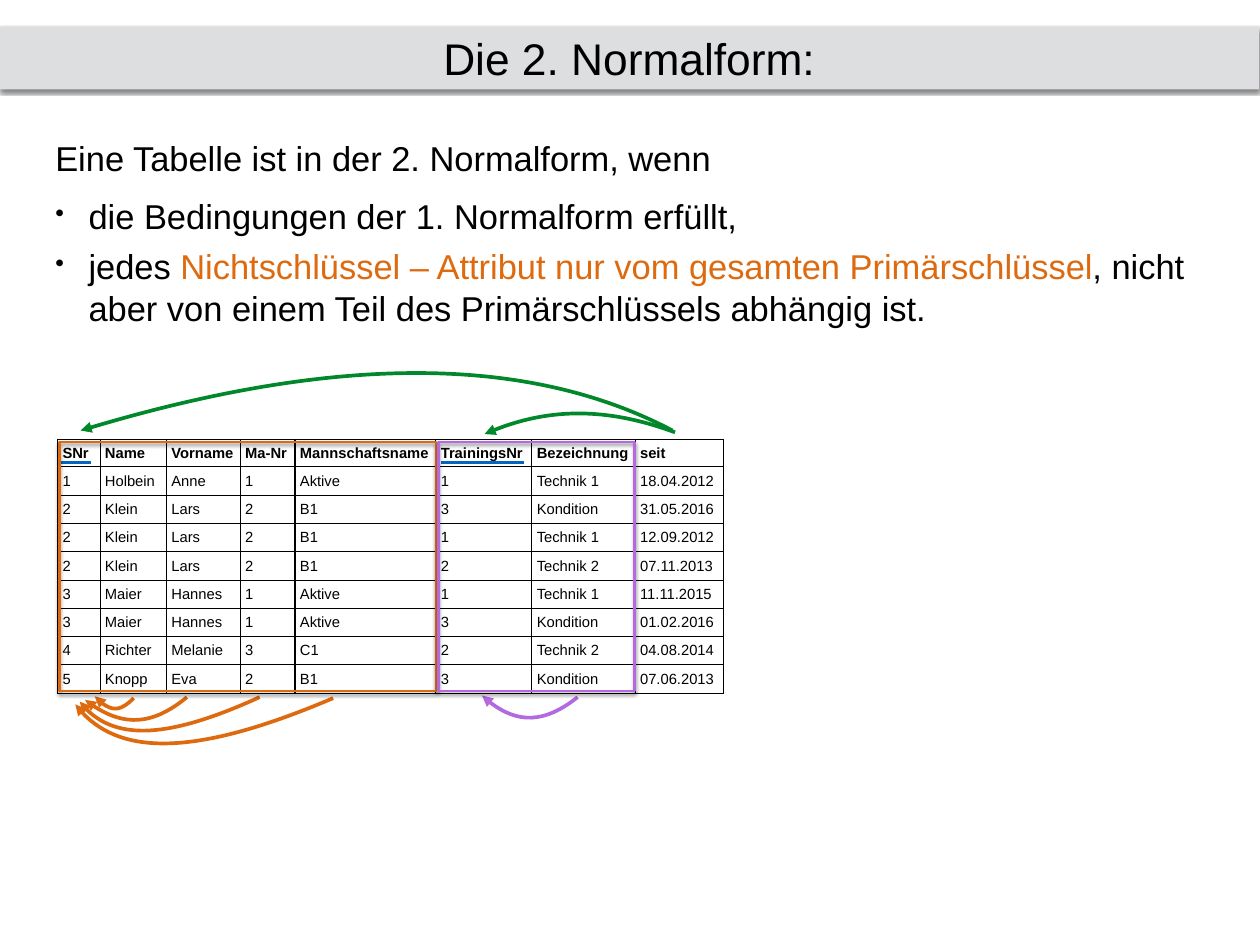
"""Builds the slide on the second normal form with its dependency arrows."""
from lxml import etree
from pptx import Presentation
from pptx import util as u
from pptx.dml import color
from pptx.enum import shapes, text
from pptx.oxml import ns

BLACK, WHITE, GREY = "000000", "FFFFFF", "DCDEE0"
ORANGE, PURPLE, GREEN, BLUE = "DE6A10", "B36AE1", "00882B", "0365C0"
INSET = 4

BODY = [
    (0, False, [("Eine Tabelle ist in der 2. Normalform, wenn", BLACK)]),
    (14, True, [("die Bedingungen der 1. Normalform erfüllt,", BLACK)]),
    (7, True, [
        ("jedes ", BLACK),
        ("Nichtschlüssel – Attribut nur vom gesamten Primärschlüssel", ORANGE),
        (", nicht aber von einem Teil des Primärschlüssels abhängig ist.", BLACK),
    ]),
]

COLUMN_WIDTHS = [34.5, 54, 60, 44.5, 114.5, 78, 84, 71.5]
HEADER_HEIGHT, ROW_HEIGHT = 22.5, 23
TABLE_LEFT, TABLE_TOP = 46.8, 357
MEMBERSHIPS = [
    ["SNr", "Name", "Vorname", "Ma-Nr", "Mannschaftsname", "TrainingsNr", "Bezeichnung", "seit"],
    ["1", "Holbein", "Anne", "1", "Aktive", "1", "Technik 1", "18.04.2012"],
    ["2", "Klein", "Lars", "2", "B1", "3", "Kondition", "31.05.2016"],
    ["2", "Klein", "Lars", "2", "B1", "1", "Technik 1", "12.09.2012"],
    ["2", "Klein", "Lars", "2", "B1", "2", "Technik 2", "07.11.2013"],
    ["3", "Maier", "Hannes", "1", "Aktive", "1", "Technik 1", "11.11.2015"],
    ["3", "Maier", "Hannes", "1", "Aktive", "3", "Kondition", "01.02.2016"],
    ["4", "Richter", "Melanie", "3", "C1", "2", "Technik 2", "04.08.2014"],
    ["5", "Knopp", "Eva", "2", "B1", "3", "Kondition", "07.06.2013"],
]

DEPENDENCIES = [
    (ORANGE, [(108.7, 567.4), (97.9, 578.2), (87.8, 578.2), (77, 565.9)]),
    (ORANGE, [(151.9, 566.6), (123.8, 589.7), (96.5, 590.4), (69.1, 568.8)]),
    (ORANGE, [(211, 566.6), (136.8, 600.5), (88.6, 601.9), (64.8, 570.2)]),
    (ORANGE, [(270.7, 567.4), (162.7, 613.4), (92.9, 615.6), (61.2, 572.4)]),
    (PURPLE, [(469.4, 566.6), (442.1, 588.2), (416.2, 588.2), (391.7, 565.2)]),
    (GREEN, [(548.6, 351.4), (493.9, 331.2), (442.1, 331.2), (393.8, 352.8)]),
    (GREEN, [(546.5, 349.9), (429.1, 288), (268.6, 288), (65.5, 349.9)]),
]


def rgb(value):
    """Return the colour of a hex string."""
    return color.RGBColor.from_string(value)


def pts(*lengths):
    """Return lengths in points as slide lengths."""
    return [u.Pt(length) for length in lengths]


def child(parent, tag, **attributes):
    """Append a drawing element with the given attributes."""
    return etree.SubElement(parent, ns.qn(tag), {k: str(v) for k, v in attributes.items()})


def style_font(run, size, value, bold=False):
    """Format a run of text."""
    run.font.name, run.font.size, run.font.bold = "Arial", u.Pt(size), bold
    run.font.color.rgb = rgb(value)


def style_line(shape, value, width):
    """Give a shape or connector a solid line."""
    shape.line.color.rgb, shape.line.width = rgb(value), u.Pt(width)


def style_frame(frame):
    """Set wrapping, insets and vertical centring of a text frame."""
    frame.word_wrap, frame.vertical_anchor = True, text.MSO_ANCHOR.MIDDLE
    frame.margin_left = frame.margin_right = u.Pt(INSET)
    frame.margin_top = frame.margin_bottom = u.Pt(INSET)


def add_shadowed_box(slide, *box):
    """Add a rectangle with a soft shadow below it."""
    shape = slide.shapes.add_shape(shapes.MSO_SHAPE.RECTANGLE, *pts(*box))
    shape.shadow.inherit = False
    effects = shape._element.spPr.find(ns.qn("a:effectLst"))
    shadow = child(effects, "a:outerShdw", blurRad=u.Pt(3), dist=u.Pt(2),
                   dir=5400000, rotWithShape=0)
    child(child(shadow, "a:srgbClr", val=BLACK), "a:alpha", val=50000)
    return shape


def add_title(slide, wording):
    """Add the grey title band."""
    band = add_shadowed_box(slide, -0.7, 21.6, 1024, 51)
    band.fill.solid()
    band.fill.fore_color.rgb = rgb(GREY)
    band.line.fill.background()
    style_frame(band.text_frame)
    band.text_frame.text = wording
    heading = band.text_frame.paragraphs[0]
    heading.alignment = text.PP_ALIGN.CENTER
    style_font(heading.runs[0], 36, BLACK)


def add_body(slide):
    """Add the definition with its bulleted conditions."""
    frame = slide.shapes.add_textbox(*pts(41, 106.5, 927.5, 165)).text_frame
    style_frame(frame)
    for index, (space, bulleted, parts) in enumerate(BODY):
        paragraph = frame.add_paragraph() if index else frame.paragraphs[0]
        paragraph.space_before = u.Pt(space)
        if bulleted:
            properties = paragraph._p.get_or_add_pPr()
            properties.set("marL", str(u.Pt(27)))
            properties.set("indent", str(u.Pt(-27)))
            child(properties, "a:buSzPct", val=75000)
            child(properties, "a:buChar", char="•")
        for wording, value in parts:
            run = paragraph.add_run()
            run.text = wording
            style_font(run, 28, value)


def style_cell(cell, wording, bold):
    """Fill a table cell with text, background and black borders."""
    cell.text = wording
    style_font(cell.text_frame.paragraphs[0].runs[0], 12, BLACK, bold)
    cell.vertical_anchor = text.MSO_ANCHOR.MIDDLE
    cell.margin_left = cell.margin_right = u.Pt(INSET)
    cell.margin_top = cell.margin_bottom = u.Pt(INSET)
    properties = cell._tc.get_or_add_tcPr()
    for side in ("a:lnL", "a:lnR", "a:lnT", "a:lnB"):
        border = child(properties, side, w=u.Pt(1))
        child(child(border, "a:solidFill"), "a:srgbClr", val=BLACK)
    cell.fill.solid()
    cell.fill.fore_color.rgb = rgb(WHITE)


def add_memberships(slide):
    """Add the table of members and their trainings."""
    heights = [HEADER_HEIGHT] + [ROW_HEIGHT] * (len(MEMBERSHIPS) - 1)
    box = pts(TABLE_LEFT, TABLE_TOP, sum(COLUMN_WIDTHS), sum(heights))
    table = slide.shapes.add_table(len(heights), len(COLUMN_WIDTHS), *box).table
    table.first_row = table.horz_banding = False
    for column, width in zip(table.columns, COLUMN_WIDTHS):
        column.width = u.Pt(width)
    for index, (row, height) in enumerate(zip(table.rows, heights)):
        row.height = u.Pt(height)
        for cell, wording in zip(row.cells, MEMBERSHIPS[index]):
            style_cell(cell, wording, index == 0)


def add_key_underline(slide, start, end):
    """Underline a part of the primary key."""
    underline = slide.shapes.add_connector(
        shapes.MSO_CONNECTOR.STRAIGHT, *pts(start, 375.8, end, 375.8))
    style_line(underline, BLUE, 3)
    child(underline._element.spPr, "a:effectLst")


def bezier(points, t):
    """Return the point of a cubic curve at t."""
    weights = ((1 - t) ** 3, 3 * t * (1 - t) ** 2, 3 * t * t * (1 - t), t ** 3)
    return tuple(u.Pt(sum(w * p[axis] for w, p in zip(weights, points))) for axis in (0, 1))


def add_dependency(slide, value, points):
    """Add a curved arrow, sized by its extent and drawn as one cubic segment."""
    start, *others = [bezier(points, step / 40) for step in range(41)]
    builder = slide.shapes.build_freeform(*start)
    builder.add_line_segments(others, close=False)
    arrow = builder.convert_to_shape()
    arrow.fill.background()
    style_line(arrow, value, 3)
    arrow.shadow.inherit = False
    outline = arrow._element.xpath(".//a:path")[0]
    for segment in outline.findall(ns.qn("a:lnTo")):
        outline.remove(segment)
    curve = child(outline, "a:cubicBezTo")
    for x, y in points[1:]:
        child(curve, "a:pt", x=u.Pt(x) - arrow.left, y=u.Pt(y) - arrow.top)
    child(arrow.line._get_or_add_ln(), "a:tailEnd", type="triangle")


def add_key_frame(slide, value, left, width):
    """Frame the columns that depend on one part of the key."""
    frame = add_shadowed_box(slide, left, 359.3, width, 202.3)
    frame.fill.background()
    style_line(frame, value, 2)


def main():
    """Build and save the slide."""
    deck = Presentation()
    deck.slide_width, deck.slide_height = pts(1024, 768)
    slide = deck.slides.add_slide(deck.slide_layouts[6])
    add_title(slide, "Die 2. Normalform:")
    add_body(slide)
    add_memberships(slide)
    add_key_underline(slide, 49.7, 74.2)
    add_key_underline(slide, 358.6, 426.2)
    for value, points in DEPENDENCIES:
        add_dependency(slide, value, points)
    add_key_frame(slide, ORANGE, 48.2, 306)
    add_key_frame(slide, PURPLE, 356.4, 159.1)
    deck.save("out.pptx")


if __name__ == "__main__":
    main()
